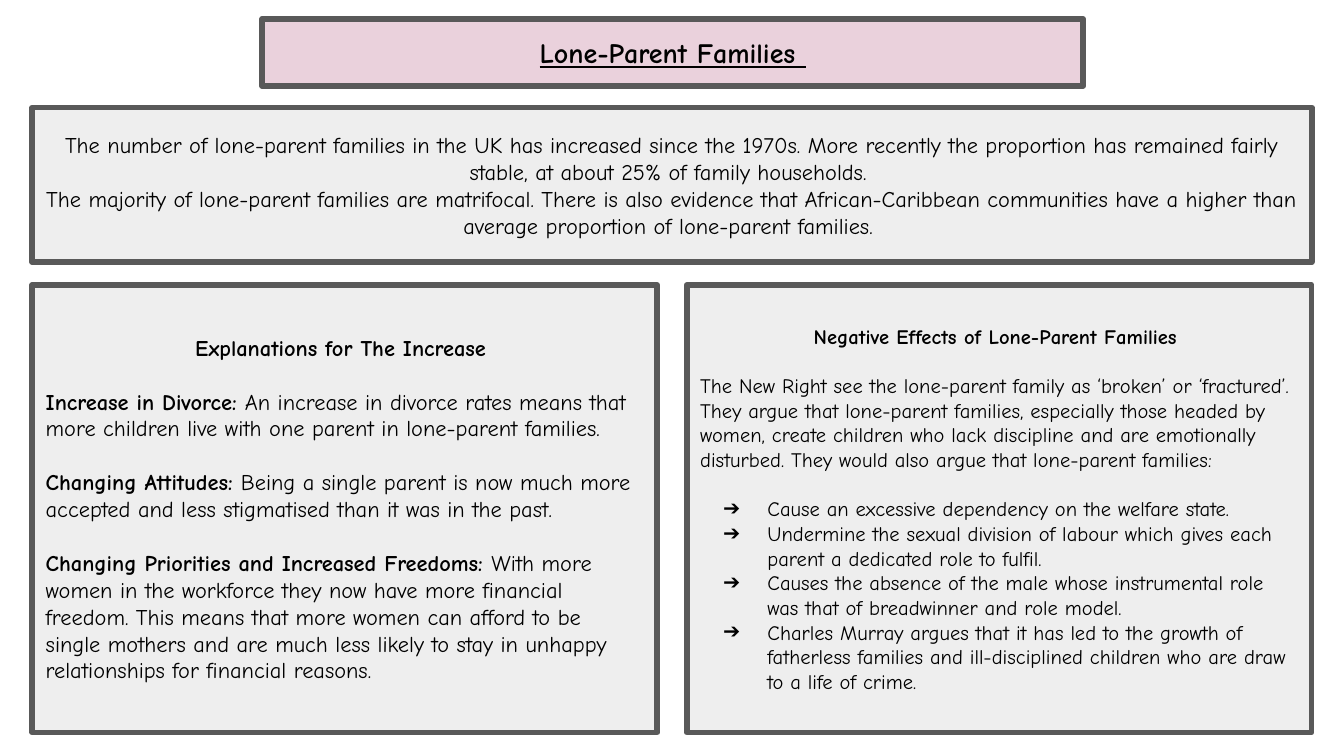
from dataclasses import dataclass

from lxml.etree import SubElement
from pptx import Presentation
from pptx.dml.color import RGBColor
from pptx.enum.shapes import MSO_SHAPE
from pptx.enum.text import MSO_ANCHOR, MSO_AUTO_SIZE, PP_ALIGN
from pptx.oxml.ns import qn
from pptx.util import Inches, Pt


@dataclass(frozen=True)
class Theme:
    font: str = "Comic Neue"
    text: str = "000000"
    border: str = "595959"
    title_fill: str = "EAD1DC"
    panel_fill: str = "EEEEEE"
    border_width: float = 3
    title_size: float = 15
    body_size: float = 12
    small_size: float = 11
    line_height: float = 1.2


@dataclass(frozen=True)
class Box:
    left: float
    top: float
    width: float
    height: float


@dataclass(frozen=True)
class Entry:
    """One paragraph: a bold lead, plain text, and an optional one-line gap above."""
    lead: str = ""
    text: str = ""
    gap: bool = False
    centred: bool = False
    bulleted: bool = False
    underlined: bool = False


THEME = Theme()
MARGIN, COLUMN_WIDTH, COLUMN_TOP, COLUMN_HEIGHT = 0.24, 4.65, 2.12, 3.33
SLIDE_WIDTH = 10
SLIDE_HEIGHT = SLIDE_WIDTH * 9 / 16
TITLE_BOX = Box(1.95, 0.14, 6.11, 0.5)
INTRO_BOX = Box(MARGIN, 0.8, SLIDE_WIDTH - 2 * MARGIN, 1.15)
LEFT_BOX = Box(MARGIN, COLUMN_TOP, COLUMN_WIDTH, COLUMN_HEIGHT)
RIGHT_BOX = Box(SLIDE_WIDTH - MARGIN - COLUMN_WIDTH, COLUMN_TOP, COLUMN_WIDTH, COLUMN_HEIGHT)

TITLE = [Entry("Lone-Parent Families ", centred=True, underlined=True)]
INTRO = [
    Entry(text="The number of lone-parent families in the UK has increased since the 1970s. "
               "More recently the proportion has remained fairly stable, at about 25% of "
               "family households. ", centred=True),
    Entry(text="The majority of lone-parent families are matrifocal. There is also evidence "
               "that African-Caribbean communities have a higher than average proportion of "
               "lone-parent families. ", centred=True),
]
EXPLANATIONS = [
    Entry("Explanations for The Increase ", centred=True),
    Entry("Increase in Divorce: ",
          "An increase in divorce rates means that more children live with one parent in "
          "lone-parent families.", gap=True),
    Entry("Changing Attitudes: ",
          "Being a single parent is now much more accepted and less stigmatised than it was "
          "in the past.", gap=True),
    Entry("Changing Priorities and Increased Freedoms: ",
          "With more women in the workforce they now have more financial freedom. This means "
          "that more women can afford to be single mothers and are much less likely to stay "
          "in unhappy relationships for financial reasons.", gap=True),
]
EFFECTS = [
    Entry("Negative Effects of Lone-Parent Families ", centred=True),
    Entry(text="The New Right see the lone-parent family as ‘broken’ or ‘fractured’. They argue "
               "that lone-parent families, especially those headed by women, create children "
               "who lack discipline and are emotionally disturbed. They would also argue that "
               "lone-parent families:", gap=True),
    Entry(text="Cause an excessive dependency on the welfare state.", gap=True, bulleted=True),
    Entry(text="Undermine the sexual division of labour which gives each parent a dedicated "
               "role to fulfil.", bulleted=True),
    Entry(text="Causes the absence of the male whose instrumental role was that of "
               "breadwinner and role model.", bulleted=True),
    Entry(text="Charles Murray argues that it has led to the growth of fatherless families "
               "and ill-disciplined children who are draw to a life of crime.", bulleted=True),
]


def set_bullet(paragraph, bulleted: bool) -> None:
    """Give an arrow bullet with a hanging indent, or clear the template's bullet."""
    properties = paragraph._p.get_or_add_pPr()
    properties.set("marL", str(Inches(0.5 if bulleted else 0)))
    properties.set("indent", str(Inches(-0.33 if bulleted else 0)))
    if bulleted:
        colour = SubElement(properties, qn("a:buClr"))
        SubElement(colour, qn("a:srgbClr"), val=THEME.text)
        SubElement(properties, qn("a:buFont"), typeface=THEME.font)
        SubElement(properties, qn("a:buChar"), char="➔")
    else:
        SubElement(properties, qn("a:buNone"))


def write_entry(paragraph, entry: Entry, size: float) -> None:
    set_bullet(paragraph, entry.bulleted)
    paragraph.alignment = PP_ALIGN.CENTER if entry.centred else PP_ALIGN.LEFT
    paragraph.space_before = Pt(size * THEME.line_height if entry.gap else 0)
    paragraph.space_after = Pt(0)
    paragraph.font.name = THEME.font
    paragraph.font.size = Pt(size)
    paragraph.font.underline = entry.underlined
    paragraph.font.color.rgb = RGBColor.from_string(THEME.text)
    for text, bold in ((entry.lead, True), (entry.text, False)):
        if text:
            run = paragraph.add_run()
            run.text = text
            run.font.bold = bold


def fill_panel(shape, box: Box, fill: str, entries: list[Entry], size: float) -> None:
    shape.left, shape.top = Inches(box.left), Inches(box.top)
    shape.width, shape.height = Inches(box.width), Inches(box.height)
    shape.shadow.inherit = False
    shape.fill.solid()
    shape.fill.fore_color.rgb = RGBColor.from_string(fill)
    shape.line.color.rgb = RGBColor.from_string(THEME.border)
    shape.line.width = Pt(THEME.border_width)
    frame = shape.text_frame
    frame.word_wrap = True
    frame.auto_size = MSO_AUTO_SIZE.NONE
    frame.vertical_anchor = MSO_ANCHOR.MIDDLE
    frame.margin_left = frame.margin_right = Inches(0.1)
    frame.margin_top = frame.margin_bottom = Inches(0.1)
    for index, entry in enumerate(entries):
        paragraph = frame.add_paragraph() if index else frame.paragraphs[0]
        write_entry(paragraph, entry, size)


def main() -> None:
    presentation = Presentation()
    presentation.slide_width = Inches(SLIDE_WIDTH)
    presentation.slide_height = Inches(SLIDE_HEIGHT)
    slide = presentation.slides.add_slide(presentation.slide_layouts.get_by_name("Two Content"))
    title, left, right = slide.placeholders
    intro = slide.shapes.add_shape(MSO_SHAPE.RECTANGLE, 0, 0, 0, 0)
    fill_panel(title, TITLE_BOX, THEME.title_fill, TITLE, THEME.title_size)
    fill_panel(intro, INTRO_BOX, THEME.panel_fill, INTRO, THEME.body_size)
    fill_panel(left, LEFT_BOX, THEME.panel_fill, EXPLANATIONS, THEME.body_size)
    fill_panel(right, RIGHT_BOX, THEME.panel_fill, EFFECTS, THEME.small_size)
    presentation.save("out.pptx")


if __name__ == "__main__":
    main()
